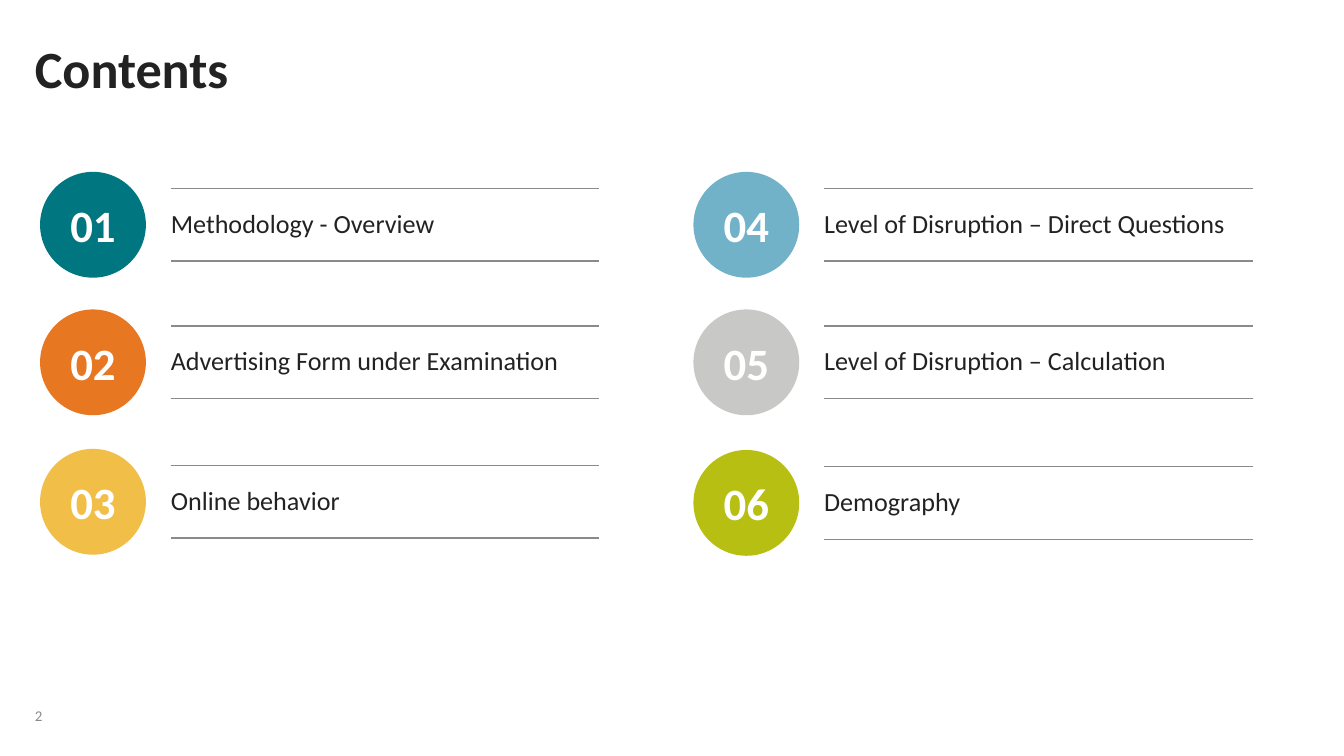
from dataclasses import dataclass

from lxml.etree import SubElement
from pptx import Presentation
from pptx.dml.color import RGBColor
from pptx.enum.shapes import MSO_CONNECTOR, MSO_SHAPE
from pptx.enum.text import MSO_ANCHOR, PP_ALIGN
from pptx.oxml.ns import qn
from pptx.util import Pt

COLORS = {
    "ink": "222223",
    "gray": "888B8D",
    "white": "FFFFFF",
    "teal": "007681",
    "orange": "E87722",
    "yellow": "F1BE48",
    "blue": "71B2C9",
    "silver": "C8C9C7",
    "lime": "B7BF12",
}
FONT = "Calibri"
LEFT, COLUMN_PITCH, ROWS_PER_COLUMN = 21.5, 350, 3
CIRCLE, TEXT_OFFSET, TEXT_WIDTH, TEXT_HEIGHT = 56.7, 70, 229.6, 15.2
RULE_OFFSETS = (8.8, 47.8)


@dataclass
class Chapter:
    title: str
    color: str
    top: float


CHAPTERS = [
    Chapter("Methodology - Overview", "teal", 92.1),
    Chapter("Advertising Form under Examination", "orange", 165.8),
    Chapter("Online behavior", "yellow", 240.5),
    Chapter("Level of Disruption – Direct Questions", "blue", 92.1),
    Chapter("Level of Disruption – Calculation", "silver", 165.8),
    Chapter("Demography", "lime", 241.1),
]


def rgb(name: str) -> RGBColor:
    return RGBColor.from_string(COLORS[name])


def set_text(tf, text: str, size: float, color: str, bold: bool = False):
    p = tf.paragraphs[0]
    p.text = text
    p.font.name = FONT
    p.font.size = Pt(size)
    p.font.bold = bold
    p.font.color.rgb = rgb(color)
    return p


def add_text(s, text: str, x: float, y: float, w: float, h: float, size: float,
             color: str, anchor=MSO_ANCHOR.TOP, bold: bool = False, wrap: bool = True):
    tf = s.shapes.add_textbox(Pt(x), Pt(y), Pt(w), Pt(h)).text_frame
    tf.margin_left = tf.margin_right = tf.margin_top = tf.margin_bottom = 0
    tf.word_wrap = wrap
    tf.vertical_anchor = anchor
    return set_text(tf, text, size, color, bold)


def add_rule(s, x: float, y: float, w: float) -> None:
    line = s.shapes.add_connector(MSO_CONNECTOR.STRAIGHT, Pt(x), Pt(y), Pt(x + w), Pt(y))
    line.line.color.rgb = rgb("gray")
    line.line.width = Pt(0.75)
    SubElement(line._element.spPr, qn("a:effectLst"))


def add_chapter(s, number: int, chapter: Chapter) -> None:
    x = LEFT + (number - 1) // ROWS_PER_COLUMN * COLUMN_PITCH
    sp = s.shapes.add_shape(MSO_SHAPE.OVAL, Pt(x), Pt(chapter.top), Pt(CIRCLE), Pt(CIRCLE))
    sp.shadow.inherit = False
    sp.fill.solid()
    sp.fill.fore_color.rgb = rgb(chapter.color)
    sp.line.fill.background()
    sp.text_frame.vertical_anchor = MSO_ANCHOR.MIDDLE
    p = set_text(sp.text_frame, f"{number:02d}", 24, "white", bold=True)
    p.alignment = PP_ALIGN.CENTER

    text_x = x + TEXT_OFFSET
    text_y = chapter.top + (CIRCLE - TEXT_HEIGHT) / 2
    p = add_text(s, chapter.title, text_x, text_y, TEXT_WIDTH, TEXT_HEIGHT, 14, "ink",
                 MSO_ANCHOR.MIDDLE)
    p.line_spacing = 0.9
    for offset in RULE_OFFSETS:
        add_rule(s, text_x, chapter.top + offset, TEXT_WIDTH)


def main() -> None:
    prs = Presentation()
    prs.slide_width, prs.slide_height = Pt(720), Pt(405)
    s = prs.slides.add_slide(prs.slide_layouts[6])
    p = add_text(s, "2", 18.7, 369.4, 24.5, 18.7, 8, "gray", MSO_ANCHOR.BOTTOM, wrap=False)
    p.line_spacing = 0.85
    add_text(s, "Contents", 18.7, 19.4, 529, 66, 28, "ink", bold=True)
    for number, chapter in enumerate(CHAPTERS, start=1):
        add_chapter(s, number, chapter)
    prs.save("out.pptx")


if __name__ == "__main__":
    main()
